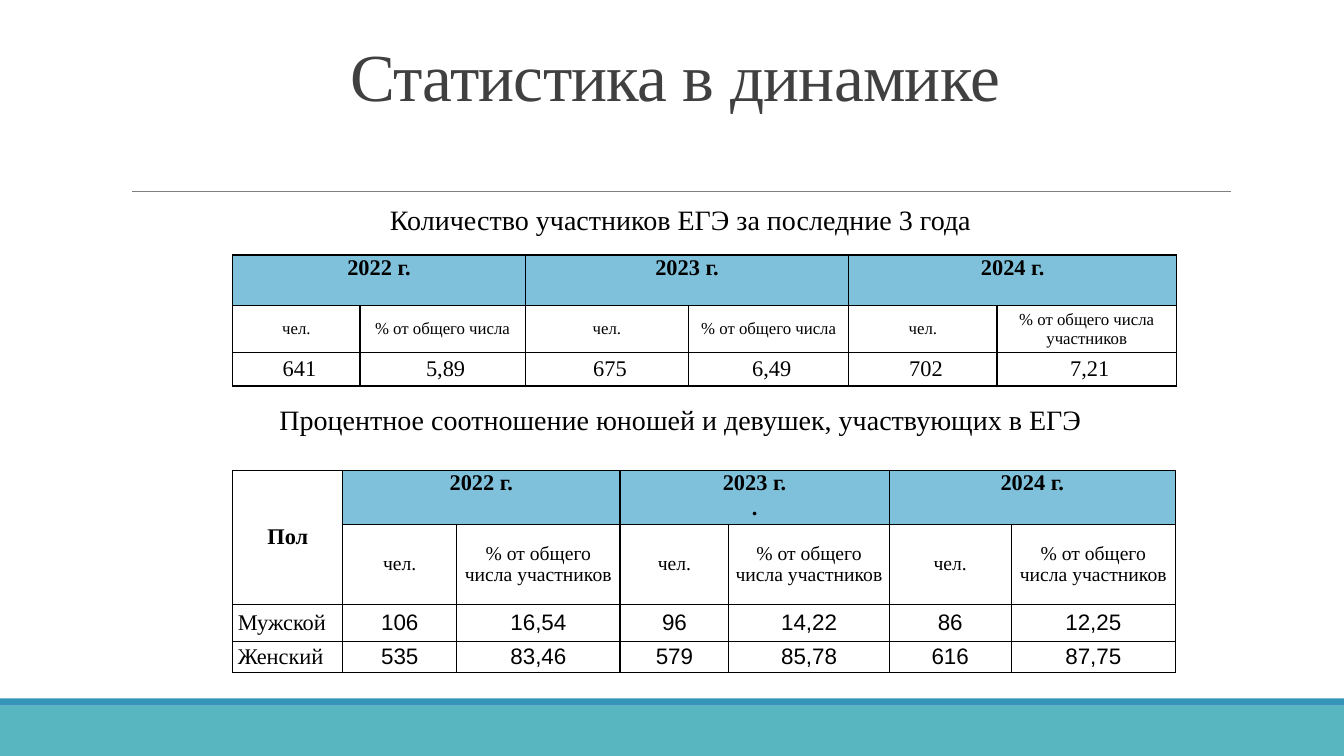
from dataclasses import dataclass

from lxml.etree import SubElement
from pptx import Presentation
from pptx.dml.color import RGBColor
from pptx.enum.shapes import MSO_CONNECTOR, MSO_SHAPE
from pptx.enum.text import MSO_ANCHOR, PP_ALIGN
from pptx.oxml import parse_xml
from pptx.oxml.ns import nsdecls, qn
from pptx.slide import Slide
from pptx.table import _Cell
from pptx.text.text import TextFrame
from pptx.util import Inches, Pt


@dataclass(frozen=True)
class Theme:
    serif: str = "Times New Roman"
    sans: str = "Arial"
    ink: str = "000000"
    title_ink: str = "404040"
    rule: str = "808080"
    paper: str = "FFFFFF"
    header: str = "7FC1DB"
    footer: str = "58B6C0"
    footer_edge: str = "3494BA"
    title_size: int = 48
    caption_size: int = 20
    table_size: int = 16


THEME = Theme()


@dataclass(frozen=True)
class TextStyle:
    size: float
    font: str = THEME.serif
    color: str = THEME.ink
    bold: bool = False
    align: PP_ALIGN = PP_ALIGN.CENTER
    line_spacing: float = 1.0
    tracking: float = 0


@dataclass(frozen=True)
class CellStyle:
    text: TextStyle
    fill: str = THEME.paper
    anchor: MSO_ANCHOR = MSO_ANCHOR.MIDDLE
    left: float = 0
    right: float = 0


@dataclass(frozen=True)
class Band:
    left: float
    top: float
    width: float
    height: float
    color: str


@dataclass(frozen=True)
class Caption:
    text: str
    top: float
    height: float
    style: TextStyle
    anchor: MSO_ANCHOR = MSO_ANCHOR.TOP
    left: float = 1.2
    width: float = 11


@dataclass(frozen=True)
class TableRow:
    height: float
    cells: list[str]
    style: CellStyle
    lead: CellStyle | None = None  # style of the first cell, if it differs


@dataclass(frozen=True)
class StatTable:
    top: float
    columns: list[float]
    rows: list[TableRow]
    merges: list[tuple[int, int, int, int]]
    left: float = 2.31


def rgb(color: str) -> RGBColor:
    return RGBColor.from_string(color)


def write_text(frame: TextFrame, text: str, style: TextStyle) -> None:
    for index, line in enumerate(text.split("\n")):
        paragraph = frame.add_paragraph() if index else frame.paragraphs[0]
        paragraph.alignment = style.align
        paragraph.line_spacing = style.line_spacing
        # Blank cells need the size too, so that rows keep their height
        paragraph.font.size = Pt(style.size)
        if not line:
            continue
        run = paragraph.add_run()
        run.text = line
        run.font.name = style.font
        run.font.size = Pt(style.size)
        run.font.bold = style.bold
        run.font.color.rgb = rgb(style.color)
        if style.tracking:
            run.font._element.set("spc", str(int(style.tracking * 100)))


def draw_band(slide: Slide, band: Band) -> None:
    bar = slide.shapes.add_shape(
        MSO_SHAPE.RECTANGLE, Inches(band.left), Inches(band.top), Inches(band.width), Inches(band.height))
    bar.shadow.inherit = False
    bar.fill.solid()
    bar.fill.fore_color.rgb = rgb(band.color)
    bar.line.fill.background()


def draw_rule(slide: Slide, left: float, right: float, top: float) -> None:
    rule = slide.shapes.add_connector(
        MSO_CONNECTOR.STRAIGHT, Inches(left), Inches(top), Inches(right), Inches(top))
    rule.line.color.rgb = rgb(THEME.rule)
    rule.line.width = Pt(0.5)
    SubElement(rule._element.spPr, qn("a:effectLst"))


def draw_caption(slide: Slide, caption: Caption) -> None:
    frame = slide.shapes.add_textbox(
        Inches(caption.left), Inches(caption.top), Inches(caption.width), Inches(caption.height)).text_frame
    frame.word_wrap = True
    frame.vertical_anchor = caption.anchor
    frame.margin_left = frame.margin_right = 0
    frame.margin_top = frame.margin_bottom = Inches(0.05)
    write_text(frame, caption.text, caption.style)


def add_borders(cell: _Cell) -> None:
    properties = cell._tc.get_or_add_tcPr()
    for side in ("lnL", "lnR", "lnT", "lnB"):
        properties.append(parse_xml(
            f'<a:{side} {nsdecls("a")} w="{Pt(1)}"><a:solidFill>'
            f'<a:srgbClr val="{THEME.ink}"/></a:solidFill></a:{side}>'))


def fill_cell(cell: _Cell, text: str, style: CellStyle) -> None:
    add_borders(cell)
    cell.fill.solid()
    cell.fill.fore_color.rgb = rgb(style.fill)
    cell.vertical_anchor = style.anchor
    cell.margin_left, cell.margin_right = Inches(style.left), Inches(style.right)
    cell.margin_top = cell.margin_bottom = 0
    write_text(cell.text_frame, text, style.text)


def draw_table(slide: Slide, stats: StatTable) -> None:
    table = slide.shapes.add_table(
        len(stats.rows), len(stats.columns), Inches(stats.left), Inches(stats.top),
        Inches(sum(stats.columns)), Inches(sum(row.height for row in stats.rows))).table
    table.first_row = table.horz_banding = False
    for column, width in zip(table.columns, stats.columns):
        column.width = Inches(width)
    for r, row in enumerate(stats.rows):
        table.rows[r].height = Inches(row.height)
        for c, text in enumerate(row.cells):
            style = row.lead if row.lead and c == 0 else row.style
            fill_cell(table.cell(r, c), text, style)
    for top, left, bottom, right in stats.merges:
        table.cell(top, left).merge(table.cell(bottom, right))


# Text and cell styles
TITLE = TextStyle(THEME.title_size, color=THEME.title_ink, line_spacing=0.85, tracking=-0.5)
CAPTION = TextStyle(THEME.caption_size, line_spacing=0.9)
BOLD = TextStyle(THEME.table_size, bold=True)
YEAR = CellStyle(BOLD, THEME.header, MSO_ANCHOR.TOP)
COUNT_UNIT = CellStyle(TextStyle(12), left=0.07, right=0.07)
COUNT = CellStyle(TextStyle(THEME.table_size), left=0.06)
SEX_HEAD = CellStyle(BOLD, left=0.05, right=0.05)
SEX_UNIT = CellStyle(TextStyle(14), left=0.05, right=0.05)
SEX = CellStyle(TextStyle(THEME.table_size, align=PP_ALIGN.LEFT), left=0.05, right=0.05)
SHARE = CellStyle(TextStyle(THEME.table_size, THEME.sans))

# Slide content
BANDS = [Band(0, 7, 13.33, 0.5, THEME.footer), Band(0, 6.93, 13.33, 0.07, THEME.footer_edge)]
CAPTIONS = [
    Caption("Статистика в динамике", 0.31, 0.88, TITLE, MSO_ANCHOR.BOTTOM),
    Caption("Количество участников ЕГЭ за последние 3 года", 2, 0.4, CAPTION, left=1.3, width=10.9),
    Caption("Процентное соотношение юношей и девушек, участвующих в ЕГЭ", 3.98, 0.4, CAPTION,
            left=1.3, width=10.9),
]
PERCENT = "% от общего числа"
PARTICIPANTS = f"{PERCENT} участников"
TOTALS = StatTable(2.53, [1.26, 1.64, 1.62, 1.59, 1.47, 1.78], [
    TableRow(0.5, ["2022 г.", "", "2023 г.", "", "2024 г.", ""], YEAR),
    TableRow(0.47, ["чел.", PERCENT, "чел.", PERCENT, "чел.", PARTICIPANTS], COUNT_UNIT),
    TableRow(0.33, ["641", "5,89", "675", "6,49", "702", "7,21"], COUNT),
], [(0, c, 0, c + 1) for c in (0, 2, 4)])
BY_SEX = StatTable(4.67, [1.09, 1.13, 1.62, 1.08, 1.59, 1.21, 1.63], [
    TableRow(0.5, ["Пол", "2022 г.", "", "2023 г.\n.", "", "2024 г.", ""], YEAR, SEX_HEAD),
    TableRow(0.79, ["", *["чел.", PARTICIPANTS] * 3], SEX_UNIT),
    TableRow(0.37, ["Мужской", "106", "16,54", "96", "14,22", "86", "12,25"], SHARE, SEX),
    TableRow(0.31, ["Женский", "535", "83,46", "579", "85,78", "616", "87,75"], SHARE, SEX),
], [(0, 0, 1, 0), *((0, c, 0, c + 1) for c in (1, 3, 5))])


def main() -> None:
    deck = Presentation()
    deck.slide_width, deck.slide_height = Inches(13.33), Inches(7.5)
    slide = deck.slides.add_slide(deck.slide_layouts[6])
    for band in BANDS:
        draw_band(slide, band)
    draw_rule(slide, 1.31, 12.21, 1.9)
    for caption in CAPTIONS:
        draw_caption(slide, caption)
    for stats in (TOTALS, BY_SEX):
        draw_table(slide, stats)
    deck.save("out.pptx")


if __name__ == "__main__":
    main()
